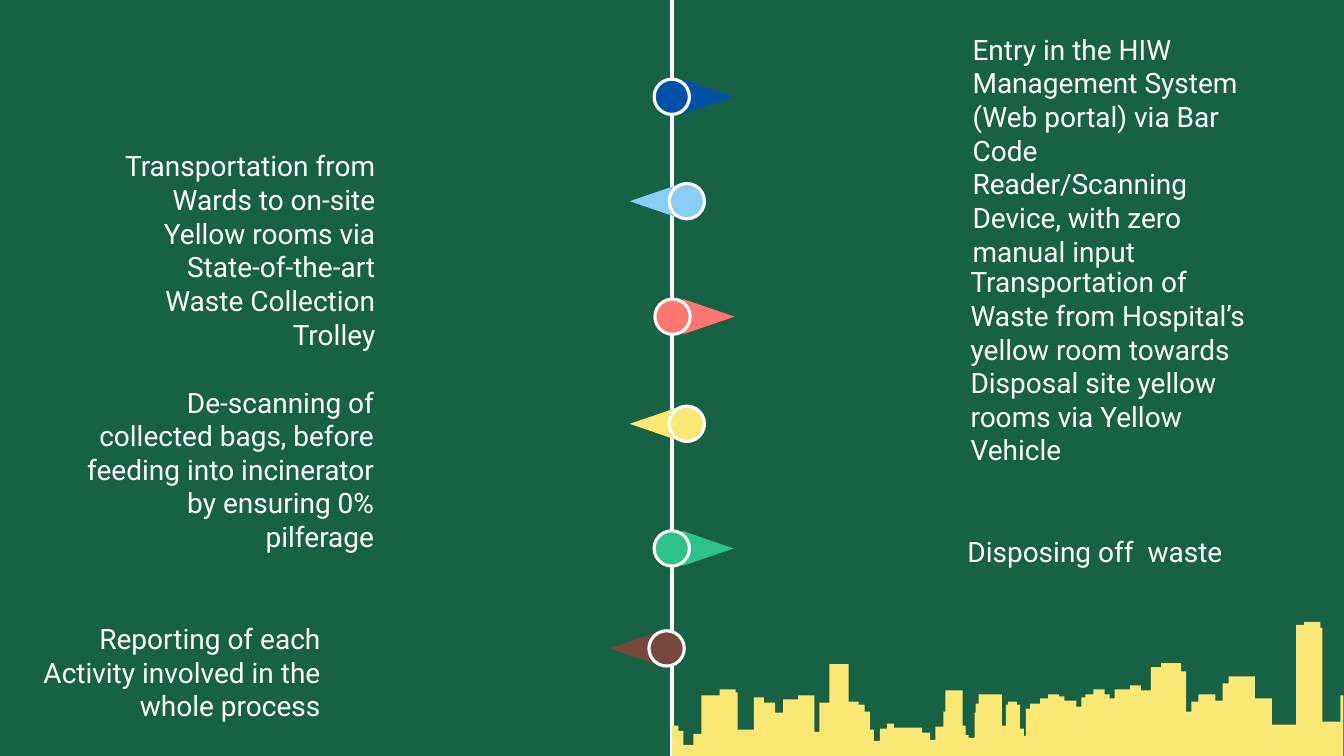
from dataclasses import dataclass

import pptx
import pptx.dml.color
import pptx.enum.dml
import pptx.enum.shapes
import pptx.enum.text
import pptx.oxml
import pptx.oxml.ns
import pptx.util

Cm = pptx.util.Cm
Pt = pptx.util.Pt
RGBColor = pptx.dml.color.RGBColor
MSO_SHAPE = pptx.enum.shapes.MSO_SHAPE
PP_ALIGN = pptx.enum.text.PP_ALIGN

FOREST = RGBColor(0x17, 0x61, 0x45)
WHITE = RGBColor(0xFF, 0xFF, 0xFF)
BLUE = RGBColor(0x04, 0x52, 0xA7)
SKY = RGBColor(0x88, 0xCD, 0xF4)
CORAL = RGBColor(0xFD, 0x76, 0x70)
YELLOW = RGBColor(0xFB, 0xE7, 0x74)
GREEN = RGBColor(0x2D, 0xC2, 0x8A)
BROWN = RGBColor(0x74, 0x48, 0x3B)

SLIDE_WIDTH = 33.87
SLIDE_HEIGHT = 19.05
RULE_WIDTH = Pt(2.25)
DOT_SIZE = 0.89
POINTER_LENGTH = 1.3
RIGHT_REACH = 0.91
LEFT_REACH = 0.79

SKYLINE_UNIT = Cm(2.54) / 100
SKYLINE_BASE = 750
SKYLINE_END = 1333


@dataclass(frozen=True)
class Step:
    text: str
    color: RGBColor
    points_right: bool
    dot_x: float
    dot_y: float
    text_left: float
    text_top: float
    text_width: float
    text_height: float


STEPS = [
    Step("Entry in the HIW Management System (Web portal) via Bar Code "
         "Reader/Scanning Device, with zero manual input",
         BLUE, True, 16.93, 2.44, 24.26, 0.69, 7.54, 3.68),
    Step("Transportation from Wards to on-site Yellow rooms via "
         "State-of-the-art Waste Collection Trolley",
         SKY, False, 17.31, 5.07, 2.34, 3.63, 7.37, 3.68),
    Step("Transportation of Waste from Hospital’s yellow room towards "
         "Disposal site yellow rooms via Yellow Vehicle",
         CORAL, True, 16.95, 7.98, 24.21, 6.55, 7.87, 3.68),
    Step("De-scanning of collected bags, before feeding into incinerator "
         "by ensuring 0% pilferage",
         YELLOW, False, 17.31, 10.68, 1.73, 9.58, 7.95, 2.82),
    Step("Disposing off  waste",
         GREEN, True, 16.93, 13.82, 24.13, 13.34, 8.36, 1.12),
    Step("Reporting of each Activity involved in the whole process",
         BROWN, False, 16.8, 16.34, 0.2, 15.54, 8.13, 1.96),
]

ROOFS = [
    (667, 720), (673, 725), (678, 739), (688, 728), (696, 690), (714, 684),
    (730, 687), (732, 724), (748, 692), (758, 697), (769, 707), (777, 694),
    (792, 690), (808, 726), (813, 697), (823, 659), (842, 696), (852, 699),
    (858, 706), (863, 724), (867, 735), (873, 723), (880, 718), (887, 722),
    (915, 727), (923, 734), (928, 721), (936, 706), (938, 685), (955, 720),
    (958, 729), (961, 732), (967, 707), (968, 698), (971, 689), (994, 720),
    (998, 699), (1000, 696), (1009, 699), (1012, 723), (1016, 730),
    (1018, 703), (1022, 698), (1032, 693), (1040, 689), (1051, 691),
    (1056, 695), (1068, 701), (1073, 692), (1077, 689), (1085, 684),
    (1096, 689), (1101, 693), (1106, 684), (1121, 680), (1132, 685),
    (1142, 662), (1152, 658), (1172, 666), (1177, 706), (1182, 696),
    (1189, 689), (1206, 695), (1213, 678), (1219, 671), (1245, 693),
    (1262, 719), (1286, 620), (1294, 617), (1310, 623), (1312, 716),
    (1330, 690),
]


def add_text(shapes, text: str, *, left: float, top: float, width: float,
             height: float, align: PP_ALIGN, size: float = 20,
             font: str = "Roboto", color: RGBColor = WHITE) -> None:
    box = shapes.add_textbox(Cm(left), Cm(top), Cm(width), Cm(height))
    frame = box.text_frame
    frame.word_wrap = True
    frame.auto_size = pptx.enum.text.MSO_AUTO_SIZE.SHAPE_TO_FIT_TEXT
    paragraph = frame.paragraphs[0]
    paragraph.alignment = align
    run = paragraph.add_run()
    run.text = text
    run.font.size = Pt(size)
    run.font.name = font
    run.font.color.rgb = color


def paint(shape, color: RGBColor, outlined: bool = False) -> None:
    shape.shadow.inherit = False
    shape.fill.solid()
    shape.fill.fore_color.rgb = color
    if outlined:
        shape.line.color.rgb = WHITE
        shape.line.width = RULE_WIDTH
    else:
        shape.line.fill.background()


def add_centred(shapes, kind: MSO_SHAPE, x: float, y: float,
                width: float, height: float):
    return shapes.add_shape(kind, Cm(x - width / 2), Cm(y - height / 2),
                            Cm(width), Cm(height))


def add_step(slide, step: Step) -> None:
    shapes = slide.shapes.add_group_shape().shapes
    reach = RIGHT_REACH if step.points_right else -LEFT_REACH
    pointer = add_centred(shapes, MSO_SHAPE.ISOSCELES_TRIANGLE,
                          step.dot_x + reach, step.dot_y,
                          DOT_SIZE, POINTER_LENGTH)
    pointer.rotation = 90 if step.points_right else 270
    paint(pointer, step.color)
    dot = add_centred(shapes, MSO_SHAPE.OVAL, step.dot_x, step.dot_y,
                      DOT_SIZE, DOT_SIZE)
    paint(dot, step.color, outlined=True)
    add_text(shapes, step.text, left=step.text_left, top=step.text_top,
             width=step.text_width, height=step.text_height,
             align=PP_ALIGN.LEFT if step.points_right else PP_ALIGN.RIGHT)


def add_timeline(slide) -> None:
    middle = Cm(SLIDE_WIDTH / 2)
    timeline = slide.shapes.add_connector(
        pptx.enum.shapes.MSO_CONNECTOR.STRAIGHT,
        middle, 0, middle, Cm(SLIDE_HEIGHT))
    timeline.line.color.rgb = WHITE
    timeline.line.width = RULE_WIDTH
    properties = timeline._element.spPr
    properties.append(pptx.oxml.parse_xml(
        f"<a:effectLst {pptx.oxml.ns.nsdecls('a')}/>"))


def add_skyline(slide) -> None:
    outline = slide.shapes.build_freeform(ROOFS[0][0], SKYLINE_BASE,
                                          scale=SKYLINE_UNIT)
    ends = [left for left, _ in ROOFS[1:]] + [SKYLINE_END]
    for (left, roof), right in zip(ROOFS, ends):
        outline.add_line_segments([(left, roof), (right, roof)], close=False)
    outline.add_line_segments([(SKYLINE_END, SKYLINE_BASE)], close=True)
    paint(outline.convert_to_shape(), YELLOW)


def main() -> None:
    deck = pptx.Presentation()
    deck.slide_width = Cm(SLIDE_WIDTH)
    deck.slide_height = Cm(SLIDE_HEIGHT)
    slide = deck.slides.add_slide(deck.slide_layouts[6])
    slide.background.fill.solid()
    slide.background.fill.fore_color.rgb = FOREST
    add_timeline(slide)
    add_skyline(slide)
    for step in STEPS:
        add_step(slide, step)
    deck.save("out.pptx")


if __name__ == "__main__":
    main()
